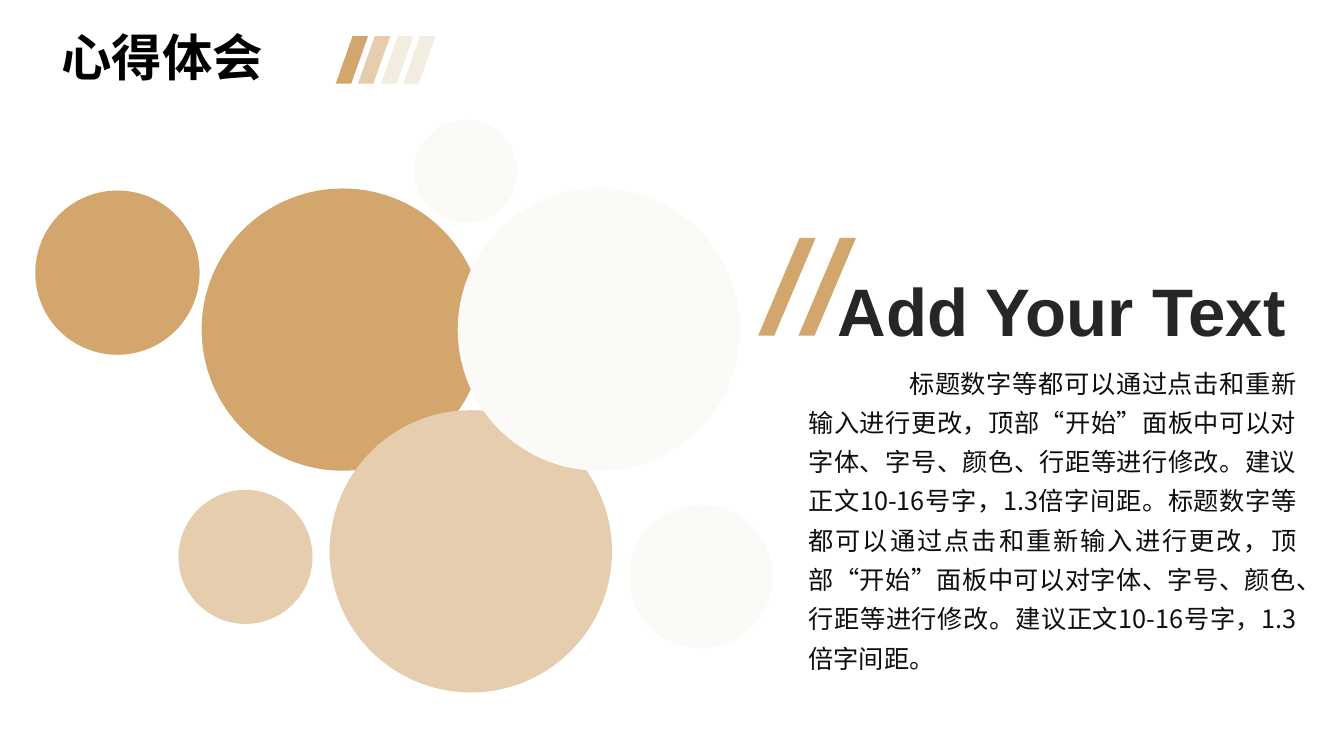
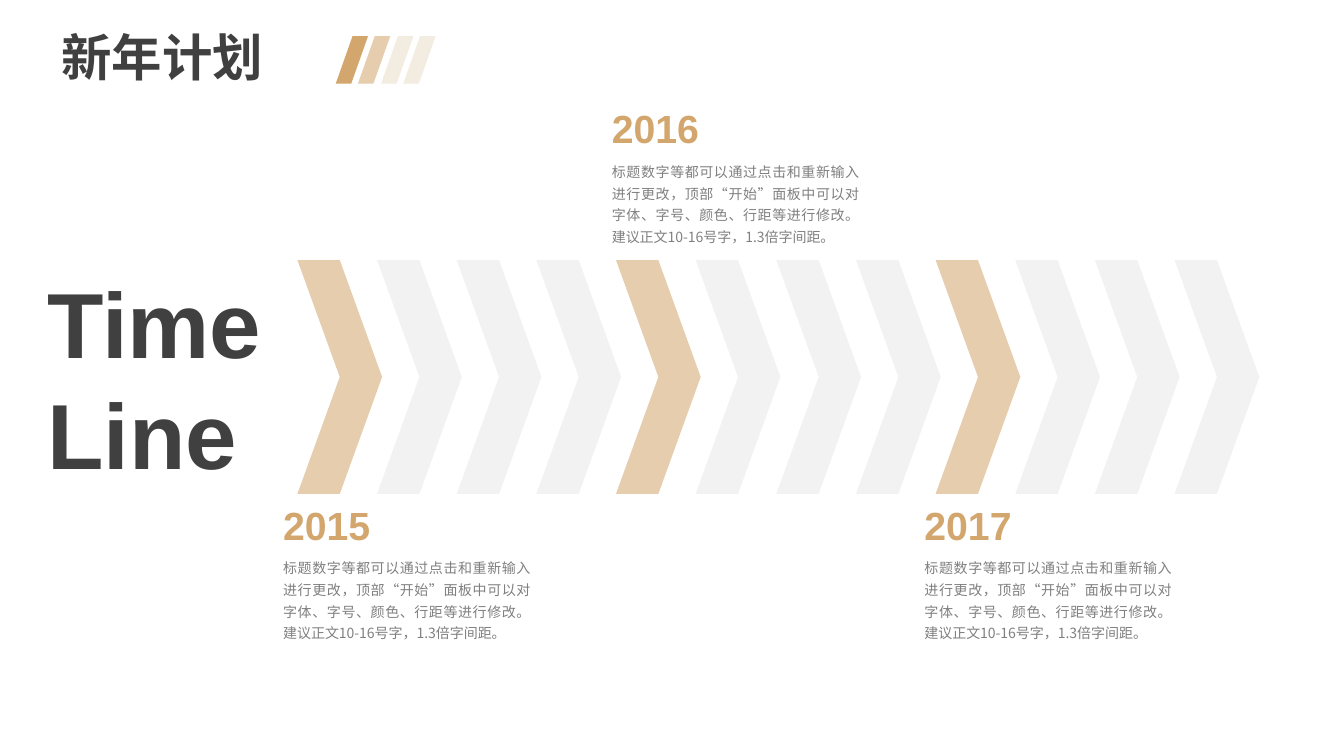
"""Build a two-slide deck: overlapping circles with text, and a chevron time line."""
from dataclasses import dataclass

from pptx import Presentation
from pptx.dml.color import RGBColor
from pptx.enum.lang import MSO_LANGUAGE_ID
from pptx.enum.shapes import MSO_SHAPE
from pptx.enum.text import MSO_ANCHOR, MSO_AUTO_SIZE, PP_ALIGN
from pptx.oxml.ns import qn
from pptx.presentation import Presentation as Deck
from pptx.slide import Slide
from pptx.util import Emu, Pt

PX = 9144
COLORS = {
    "gold": "D2A66C",
    "sand": "E6CDAD",
    "cream": "F2ECE1",
    "ivory": "FBFAF6",
    "mist": "F2F2F2",
    "black": "000000",
    "ink": "0D0D0D",
    "charcoal": "262626",
    "slate": "404040",
    "gray": "808080",
}
LATIN = "Arial"
CHINESE = "Noto Sans CJK SC"
GUIDANCE = (
    "标题数字等都可以通过点击和重新输入进行更改，"
    "顶部“开始”面板中可以对字体、字号、颜色、行距等进行修改。"
    "建议正文10-16号字，1.3倍字间距。"
)


@dataclass(frozen=True)
class Box:
    left: int
    top: int
    width: int
    height: int

    def emu(self) -> tuple[Emu, ...]:
        return tuple(Emu(n * PX) for n in (self.left, self.top, self.width, self.height))


@dataclass(frozen=True)
class Style:
    size: int
    color: str
    font: str = LATIN
    bold: bool = True
    align: PP_ALIGN = PP_ALIGN.LEFT
    spacing: float = 1.0
    indent: int = 0
    wrap: bool = False
    anchor: MSO_ANCHOR = MSO_ANCHOR.TOP
    grow: bool = True


@dataclass(frozen=True)
class Circle:
    left: int
    top: int
    diameter: int
    color: str


@dataclass(frozen=True)
class Milestone:
    year: str
    left: int
    top: int


HEADLINE = Style(48, "charcoal")
BODY = Style(18, "ink", CHINESE, False, PP_ALIGN.JUSTIFY, 1.3, indent=100, wrap=True)
BANNER = Style(66, "slate", align=PP_ALIGN.JUSTIFY)
YEAR = Style(28, "gold")
CAPTION = Style(10, "gray", CHINESE, False, PP_ALIGN.JUSTIFY, 1.3, wrap=True)

CIRCLES = (
    Circle(35, 189, 163, "gold"),
    Circle(200, 187, 280, "gold"),
    Circle(327, 407, 280, "sand"),
    Circle(454, 187, 280, "ivory"),
    Circle(624, 501, 142, "ivory"),
    Circle(411, 119, 102, "ivory"),
    Circle(177, 486, 133, "sand"),
)
MILESTONES = (
    Milestone("2015", 271, 492),
    Milestone("2017", 907, 492),
    Milestone("2016", 597, 99),
)


def add_shape(slide: Slide, kind: MSO_SHAPE, box: Box, color: str, slant: float | None = None) -> None:
    shape = slide.shapes.add_shape(kind, *box.emu())
    shape.shadow.inherit = False
    shape.fill.solid()
    shape.fill.fore_color.rgb = RGBColor.from_string(COLORS[color])
    shape.line.fill.background()
    if slant is not None:
        shape.adjustments[0] = slant


def add_text(slide: Slide, box: Box, lines: tuple[str, ...], style: Style) -> None:
    frame = slide.shapes.add_textbox(*box.emu()).text_frame
    frame.word_wrap = style.wrap
    frame.auto_size = MSO_AUTO_SIZE.SHAPE_TO_FIT_TEXT if style.grow else MSO_AUTO_SIZE.NONE
    frame.vertical_anchor = style.anchor
    for index, line in enumerate(lines):
        paragraph = frame.add_paragraph() if index else frame.paragraphs[0]
        paragraph.alignment = style.align
        paragraph.line_spacing = style.spacing
        if style.indent:
            paragraph._p.get_or_add_pPr().set("indent", str(style.indent * PX))
        run = paragraph.add_run()
        run.text = line
        font = run.font
        font.size = Pt(style.size)
        font.bold = style.bold
        font.name = style.font
        font.color.rgb = RGBColor.from_string(COLORS[style.color])
        font.language_id = MSO_LANGUAGE_ID.SIMPLIFIED_CHINESE
        east_asian = run._r.get_or_add_rPr().makeelement(qn("a:ea"), {"typeface": CHINESE})
        run._r.rPr.find(qn("a:latin")).addnext(east_asian)


def add_titled_slide(presentation: Deck, title: str, color: str) -> Slide:
    slide = presentation.slides.add_slide(presentation.slide_layouts[6])
    for index, stripe in enumerate(("gold", "sand", "cream", "cream")):
        box = Box(333 + round(index * 67 / 3), 36, 32, 47)
        add_shape(slide, MSO_SHAPE.PARALLELOGRAM, box, stripe, 0.52)
    style = Style(36, color, spacing=0.9, wrap=True, anchor=MSO_ANCHOR.MIDDLE, grow=False)
    add_text(slide, Box(51, 27, 294, 65), (title,), style)
    return slide


def build_reflections(presentation: Deck) -> None:
    slide = add_titled_slide(presentation, "心得体会", "black")
    for circle in CIRCLES:
        box = Box(circle.left, circle.top, circle.diameter, circle.diameter)
        add_shape(slide, MSO_SHAPE.OVAL, box, circle.color)
    for left in (752, 792):
        add_shape(slide, MSO_SHAPE.PARALLELOGRAM, Box(left, 236, 57, 97), "gold", 0.72)
    add_text(slide, Box(821, 262, 470, 91), ("Add Your Text",), HEADLINE)
    add_text(slide, Box(792, 351, 504, 325), (GUIDANCE * 2,), BODY)


def build_time_line(presentation: Deck) -> None:
    slide = add_titled_slide(presentation, "新年计划", "slate")
    add_text(slide, Box(37, 259, 235, 232), ("Time", "Line"), BANNER)
    for index in range(12):
        box = Box(295 + round(index * 870 / 11), 258, 84, 232)
        add_shape(slide, MSO_SHAPE.CHEVRON, box, "mist" if index % 4 else "sand")
    for milestone in MILESTONES:
        add_text(slide, Box(milestone.left, milestone.top, 108, 57), (milestone.year,), YEAR)
        add_text(slide, Box(milestone.left, milestone.top + 53, 265, 98), (GUIDANCE,), CAPTION)


def main() -> None:
    presentation = Presentation()
    presentation.slide_width = Emu(1333 * PX)
    presentation.slide_height = Emu(750 * PX)
    build_reflections(presentation)
    build_time_line(presentation)
    presentation.save("out.pptx")


if __name__ == "__main__":
    main()
